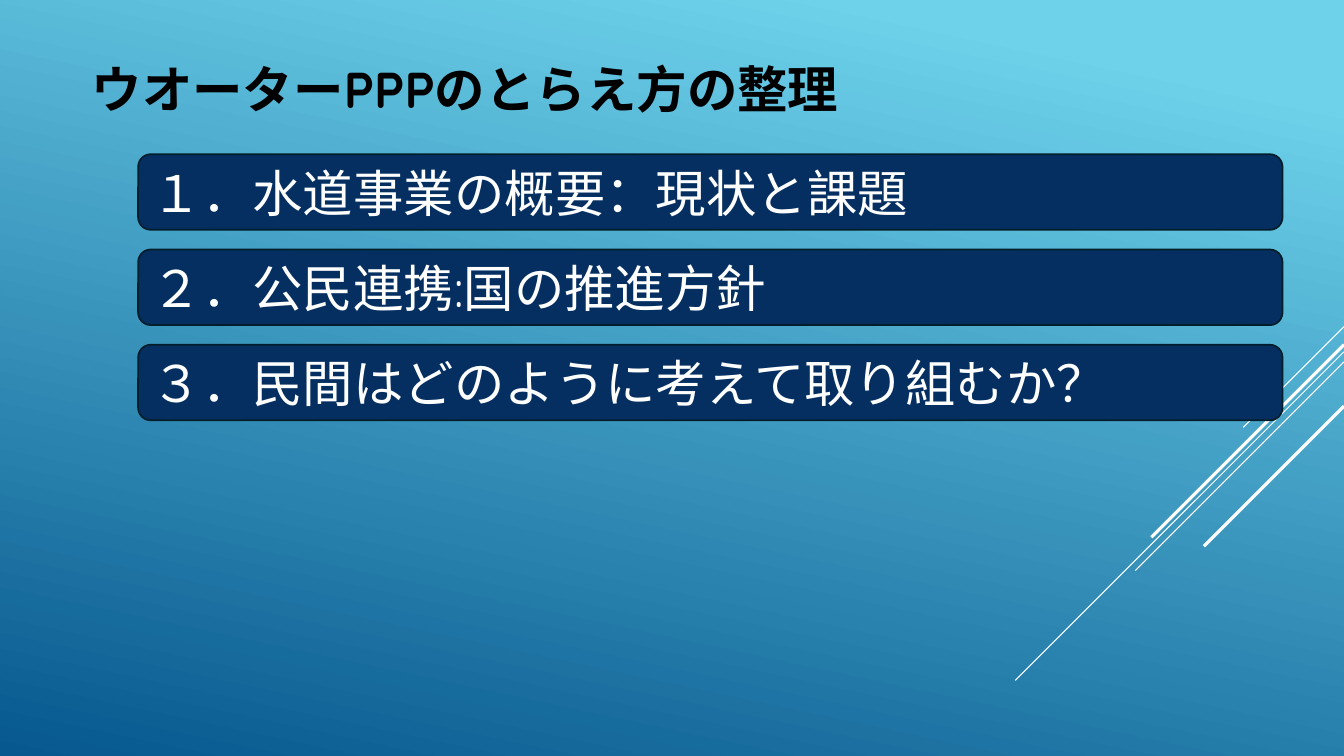
from lxml.etree import SubElement
from pptx import Presentation
from pptx.dml.color import RGBColor
from pptx.enum.shapes import MSO_CONNECTOR, MSO_SHAPE
from pptx.enum.text import MSO_ANCHOR, PP_ALIGN
from pptx.oxml.ns import qn
from pptx.util import Inches, Pt

SKY = RGBColor(0x6E, 0xD2, 0xEB)
DEEP_BLUE = RGBColor(0x06, 0x58, 0x8E)
NAVY = RGBColor(0x05, 0x2F, 0x61)
OUTLINE = RGBColor(0x02, 0x1E, 0x2B)
WHITE = RGBColor(0xFF, 0xFF, 0xFF)
BLACK = RGBColor(0, 0, 0)

FONT = "Quicksand"
SLIDE_WIDTH = 13.33
TITLE = "ウオーターPPPのとらえ方の整理"
TOPICS = [
    "１．水道事業の概要：現状と課題",
    "２．公民連携:国の推進方針",
    "３．民間はどのように考えて取り組むか？",
]
FIRST_TOP, TOPIC_PITCH = 1.53, 0.945

# Start height on the right edge, run down to the left at 45 degrees, width in points
RAYS = [
    (3.24, 1.0, 0.75),
    (3.49, 3.26, 0.75),
    (3.59, 2.07, 0.75),
    (3.42, 1.91, 2.25),
    (4.03, 1.39, 2.25),
]


def paint_background(slide):
    fill = slide.background.fill
    fill.gradient()
    fill.gradient_angle = 258
    stops = [(0.1, SKY), (1.0, DEEP_BLUE)]
    for stop, (position, color) in zip(fill.gradient_stops, stops):
        stop.position = position
        stop.color.rgb = color


def add_ray(slide, top, run, width):
    ray = slide.shapes.add_connector(
        MSO_CONNECTOR.STRAIGHT, Inches(SLIDE_WIDTH), Inches(top),
        Inches(SLIDE_WIDTH - run), Inches(top + run))
    ray.line.color.rgb = WHITE
    ray.line.width = Pt(width)
    SubElement(ray._element.spPr, qn("a:effectLst"))


def write_text(frame, text, color, bold=False):
    frame.word_wrap = True
    paragraph = frame.paragraphs[0]
    paragraph.alignment = PP_ALIGN.LEFT
    run = paragraph.add_run()
    run.text = text
    for name, value in {"name": FONT, "size": Pt(36), "bold": bold}.items():
        setattr(run.font, name, value)
    run.font.color.rgb = color
    SubElement(run.font._element, qn("a:ea"), typeface=FONT)


def add_title(slide):
    title = slide.shapes.add_textbox(
        Inches(0.91), Inches(0.58), Inches(11.53), Inches(0.52))
    frame = title.text_frame
    for side in ("left", "top", "right", "bottom"):
        setattr(frame, f"margin_{side}", 0)
    write_text(frame, TITLE, BLACK, bold=True)


def add_topic(slide, top, text):
    topic = slide.shapes.add_shape(
        MSO_SHAPE.ROUNDED_RECTANGLE, Inches(1.37), Inches(top),
        Inches(11.35), Inches(0.75))
    topic.shadow.inherit = False
    topic.fill.solid()
    topic.fill.fore_color.rgb = NAVY
    topic.line.color.rgb = OUTLINE
    topic.line.width = Pt(1.25)
    topic.text_frame.vertical_anchor = MSO_ANCHOR.MIDDLE
    write_text(topic.text_frame, text, WHITE)


def main():
    deck = Presentation()
    deck.slide_width, deck.slide_height = Inches(SLIDE_WIDTH), Inches(7.5)
    slide = deck.slides.add_slide(deck.slide_layouts[6])
    paint_background(slide)
    for ray in RAYS:
        add_ray(slide, *ray)
    add_title(slide)
    for index, text in enumerate(TOPICS):
        add_topic(slide, FIRST_TOP + index * TOPIC_PITCH, text)
    deck.save("out.pptx")


if __name__ == "__main__":
    main()
